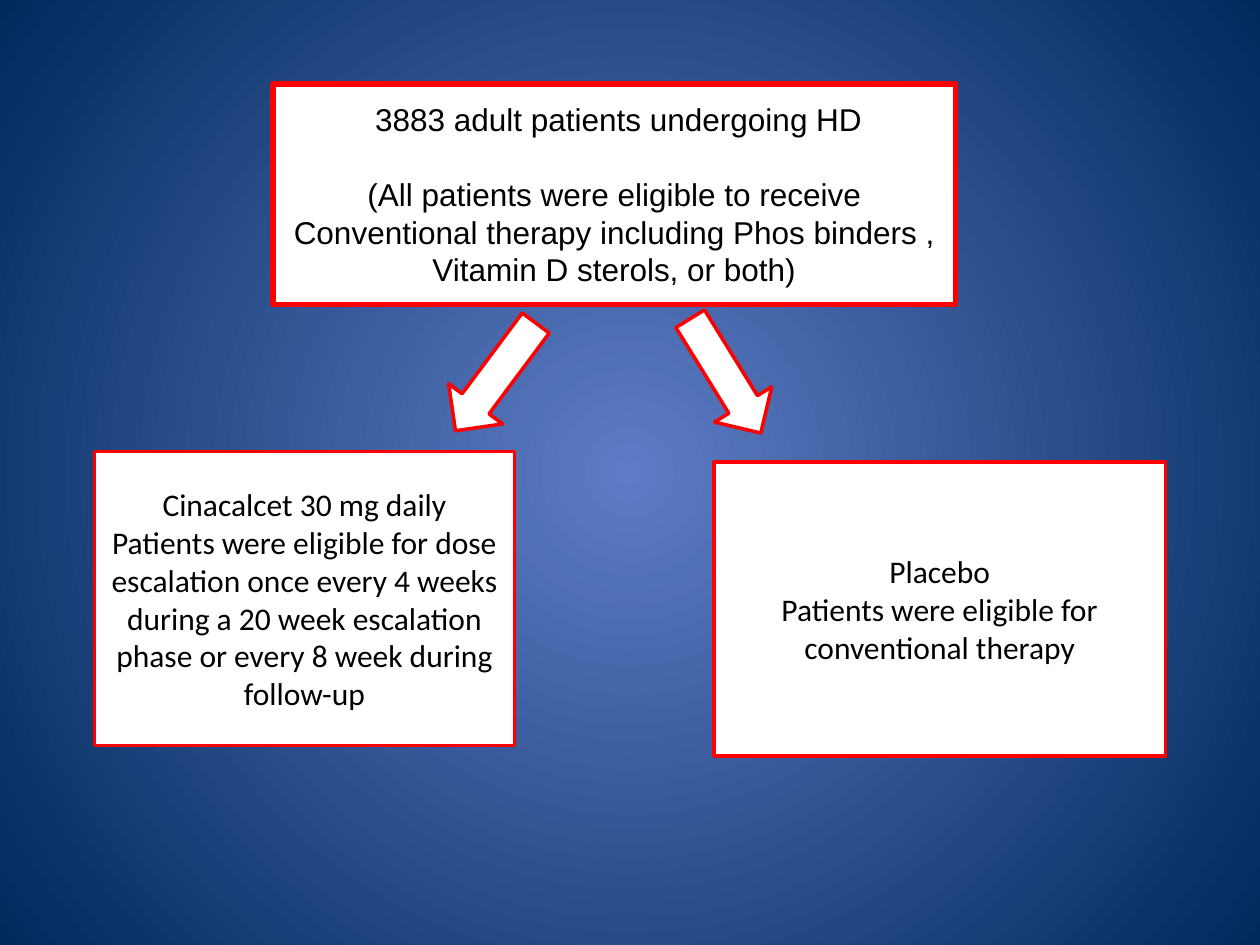
from pptx import Presentation
from pptx.dml.color import RGBColor
from pptx.enum.shapes import MSO_SHAPE
from pptx.enum.text import MSO_ANCHOR, PP_ALIGN
from pptx.oxml import parse_xml
from pptx.oxml.ns import nsdecls
from pptx.util import Inches, Pt

CELL = Inches(1) / 12
COLS, ROWS = 120, 90


def paint(color, code):
    color.rgb = RGBColor.from_string(code)


def backdrop(slide, inner, outer):
    fill = slide.background.fill
    fill.gradient()
    for stop, code, pos in zip(fill.gradient_stops, (inner, outer), (0, 1)):
        paint(stop.color, code)
        stop.position = pos
    line = slide.element.xpath(".//p:bg//a:lin")[0]
    round_path = parse_xml(
        f'<a:path {nsdecls("a")} path="circle">'
        '<a:fillToRect l="50000" t="50000" r="50000" b="50000"/></a:path>'
    )
    line.getparent().replace(line, round_path)


def block(slide, kind, grid, weight=2):
    shape = slide.shapes.add_shape(kind, *(round(n * CELL) for n in grid))
    shape.shadow.inherit = False
    shape.fill.solid()
    paint(shape.fill.fore_color, "FFFFFF")
    paint(shape.line.color, "FF0000")
    shape.line.width = Pt(weight)
    return shape


def card(slide, grid, lines, font="Calibri", weight=2, gap=0):
    frame = block(slide, MSO_SHAPE.RECTANGLE, grid, weight).text_frame
    frame.word_wrap = True
    frame.vertical_anchor = MSO_ANCHOR.MIDDLE
    for i, text in enumerate(lines):
        para = frame.add_paragraph() if i else frame.paragraphs[0]
        para.alignment = PP_ALIGN.CENTER
        para.space_before = Pt(gap if i else 0)
        run = para.add_run()
        run.text = text
        run.font.name = font
        run.font.size = Pt(18)
        paint(run.font.color, "000000")


def arrow(slide, col, row, turn):
    shape = block(slide, MSO_SHAPE.DOWN_ARROW, (col, row, 6.4, 12.8))
    shape.rotation = turn


def main():
    deck = Presentation()
    deck.slide_width = round(COLS * CELL)
    deck.slide_height = round(ROWS * CELL)
    slide = deck.slides.add_slide(deck.slide_layouts[6])
    backdrop(slide, "5E7CC5", "00295C")
    card(slide, (26, 8, 65, 21), [
        " 3883 adult patients undergoing HD",
        "(All patients were eligible to receive Conventional therapy "
        "including Phos binders , Vitamin D sterols, or both)",
    ], "Arial", 3, 21)
    arrow(slide, 44, 29.5, 36.7)
    arrow(slide, 65.9, 29.4, 328.3)
    card(slide, (9, 43, 40, 28), [
        "Cinacalcet 30 mg daily",
        "Patients were eligible for dose escalation once every 4 weeks "
        "during a 20 week escalation phase or every 8 week during follow-up",
    ])
    card(slide, (68, 44, 43, 28), [
        "Placebo",
        "Patients were eligible for conventional therapy",
    ])
    deck.save("out.pptx")


if __name__ == "__main__":
    main()
